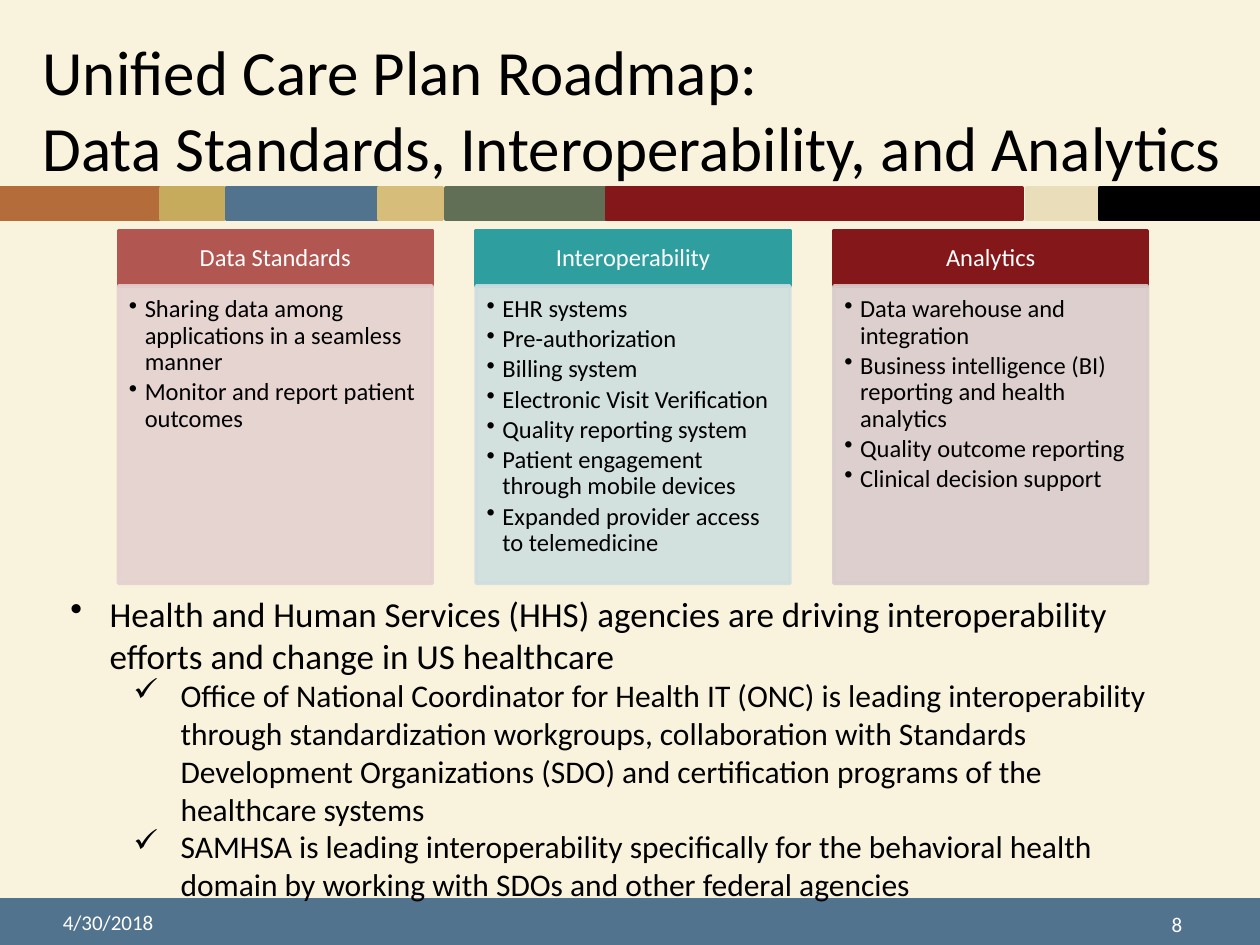
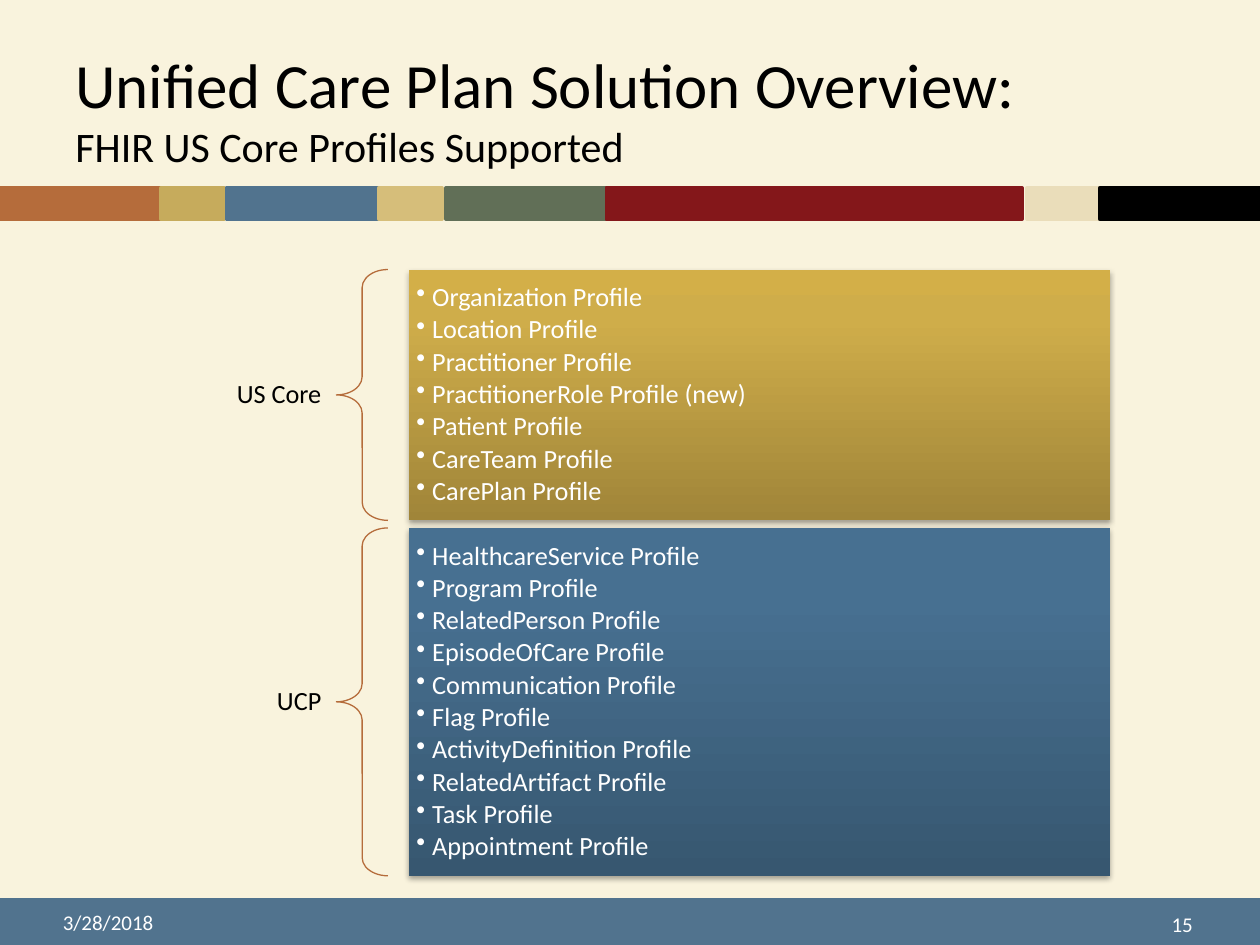
from copy import deepcopy
from dataclasses import dataclass

from lxml.etree import SubElement
from pptx import Presentation
from pptx.dml.color import RGBColor
from pptx.enum.shapes import MSO_SHAPE as Kind
from pptx.enum.text import MSO_ANCHOR as Anchor, PP_ALIGN as Align
from pptx.oxml.ns import qn
from pptx.util import Pt


@dataclass(frozen=True)
class Theme:
    font: str = "Calibri"
    black: str = "000000"
    white: str = "FFFFFF"
    cream: str = "F9F3DD"
    blue: str = "51738E"
    rust: str = "B56C3B"
    red: str = "84171A"
    title: float = 36
    sub: float = 24
    lead: float = 20
    point: float = 18
    group: float = 15
    panel: float = 14
    foot: float = 12


THEME = Theme()


@dataclass(frozen=True)
class Box:
    """A place on the slide, in points."""
    left: float
    top: float
    width: float
    height: float


@dataclass(frozen=True)
class Style:
    """How a paragraph looks; after is a share of the type size."""
    size: float
    color: str = THEME.black
    align: Align = Align.LEFT
    space: float = 1
    after: float = 0
    bullet: str = ""
    margin: float = 0
    hang: float = 0


@dataclass(frozen=True)
class Frame:
    anchor: Anchor = Anchor.TOP
    inset: tuple[float, float, float, float] = (7.2, 3.6, 7.2, 3.6)


@dataclass(frozen=True)
class Band:
    left: float
    width: float
    color: str


@dataclass(frozen=True)
class Panel:
    title: str
    color: str
    tint: str
    items: tuple[str, ...]


@dataclass(frozen=True)
class Group:
    label: str
    stops: tuple[str, str, str]
    items: tuple[str, ...]


MIDDLE = Frame(Anchor.MIDDLE)
TITLE = Style(THEME.title)
FOOT = Style(THEME.foot, THEME.white)
LEAD = Style(THEME.lead, bullet="•", margin=22.5, hang=22.5)
CHECK = Style(THEME.point, bullet="✓", margin=63, hang=27)
HEAD = Style(THEME.panel, THEME.white, Align.CENTER, 0.9, 0.35)
ITEM = Style(THEME.panel, space=0.9, after=0.15, bullet="•", margin=9, hang=9)
LABEL = Style(THEME.group, align=Align.RIGHT, space=0.9, after=0.35)
ENTRY = Style(THEME.group, THEME.white, space=0.9, after=0.15,
              bullet="•", margin=9, hang=9)

BANDS = (
    Band(0, 91.5, THEME.rust),
    Band(92, 36, "C6AB5C"),
    Band(129.5, 86.5, THEME.blue),
    Band(255, 91.5, "616F57"),
    Band(216.5, 36, "D6BE7A"),
    Band(346.5, 237.5, THEME.red),
    Band(587, 57.5, "EADDBA"),
    Band(628.5, 91.5, THEME.black),
)

PANELS = (
    Panel("Data Standards", "B15651", "E4D1D0", (
        "Sharing data among applications in a seamless manner",
        "Monitor and report patient outcomes")),
    Panel("Interoperability", "2F9E9F", "CEDEDF", (
        "EHR systems",
        "Pre-authorization",
        "Billing system",
        "Electronic Visit Verification",
        "Quality reporting system",
        "Patient engagement through mobile devices",
        "Expanded provider access to telemedicine")),
    Panel("Analytics", THEME.red, "D9CCCC", (
        "Data warehouse and integration",
        "Business intelligence (BI) reporting and health analytics",
        "Quality outcome reporting",
        "Clinical decision support")),
)

POINTS = (
    (LEAD, "Health and Human Services (HHS) agencies are driving "
           "interoperability efforts and change in US healthcare"),
    (CHECK, "Office of National Coordinator for Health IT (ONC) is leading "
            "interoperability through standardization workgroups, "
            "collaboration with Standards Development Organizations (SDO) "
            "and certification programs of the healthcare systems"),
    (CHECK, "SAMHSA is leading interoperability specifically for the "
            "behavioral health domain by working with SDOs and other "
            "federal agencies"),
)

GROUPS = (
    Group("US Core", ("A08539", "CFAD4A", "D3AF48"), (
        "Organization", "Location", "Practitioner", "PractitionerRole",
        "Patient", "CareTeam", "CarePlan")),
    Group("UCP", ("375770", "477091", "467193"), (
        "HealthcareService", "Program", "RelatedPerson", "EpisodeOfCare",
        "Communication", "Flag", "ActivityDefinition", "RelatedArtifact",
        "Task", "Appointment")),
)
NEW = {"PractitionerRole"}


def rgb(color: str) -> RGBColor:
    return RGBColor.from_string(color)


def spots(box: Box) -> tuple:
    return Pt(box.left), Pt(box.top), Pt(box.width), Pt(box.height)


def draw(slide, box: Box, fill: str = "", line: str = "",
         weight: float = 2, kind: Kind = Kind.RECTANGLE):
    """Add a flat shape; an empty colour means no fill or no line."""
    shape = slide.shapes.add_shape(kind, *spots(box))
    shape.shadow.inherit = False
    if fill:
        shape.fill.solid()
        shape.fill.fore_color.rgb = rgb(fill)
    else:
        shape.fill.background()
    if line:
        shape.line.color.rgb = rgb(line)
        shape.line.width = Pt(weight)
    else:
        shape.line.fill.background()
    return shape


def write(shape, paras, frame: Frame = Frame()) -> None:
    """Fill a shape with (style, text) pairs."""
    body = shape.text_frame
    body.word_wrap = True
    body.vertical_anchor = frame.anchor
    (body.margin_left, body.margin_top,
     body.margin_right, body.margin_bottom) = map(Pt, frame.inset)
    for i, (style, text) in enumerate(paras):
        para = body.add_paragraph() if i else body.paragraphs[0]
        para.text = text
        para.alignment = style.align
        para.line_spacing = style.space
        para.space_before = Pt(0)
        para.space_after = Pt(style.size * style.after)
        for run in para.runs:
            run.font.name = THEME.font
            run.font.size = Pt(style.size)
            run.font.color.rgb = rgb(style.color)
        if style.bullet:
            props = para._p.get_or_add_pPr()
            props.set("marL", str(Pt(style.margin)))
            props.set("indent", str(-Pt(style.hang)))
            SubElement(props, qn("a:buChar"), char=style.bullet)


def label(slide, box: Box, paras, frame: Frame = MIDDLE):
    shape = slide.shapes.add_textbox(*spots(box))
    write(shape, paras, frame)
    return shape


def fade(shape, percent: int) -> None:
    """Set the opacity of the fill and the line."""
    for color in shape._element.spPr.iter(qn("a:srgbClr")):
        SubElement(color, qn("a:alpha"), val=str(percent * 1000))


def shade(shape, colors: tuple[str, str, str]) -> None:
    """Fill with a gradient that rises from the bottom edge."""
    shape.fill.gradient()
    shape.fill.gradient_angle = 90
    stops = shape._element.spPr.find(".//" + qn("a:gsLst"))
    stops.append(deepcopy(stops[-1]))
    for stop, color, place in zip(shape.fill.gradient_stops, colors,
                                  (0, 0.8, 1)):
        stop.color.rgb = rgb(color)
        stop.position = place


def cast(shape) -> None:
    """Add a soft shadow below the shape."""
    effects = shape._element.spPr.find(qn("a:effectLst"))
    shadow = SubElement(effects, qn("a:outerShdw"), blurRad=str(Pt(3.1)),
                        dist=str(Pt(1.8)), dir="5400000", rotWithShape="0")
    color = SubElement(shadow, qn("a:srgbClr"), val=THEME.black)
    SubElement(color, qn("a:alpha"), val="35000")


def start(deck, title: str, box: Box, date: str, page: str):
    """Add a slide with its backdrop, bands, title and footer."""
    slide = deck.slides.add_slide(deck.slide_layouts[6])
    draw(slide, Box(0, 511.2, 720, 28.8), THEME.blue)
    draw(slide, Box(0, 0, 720, 512), THEME.cream, THEME.cream)
    for band in BANDS:
        draw(slide, Box(band.left, 107.3, band.width, 18),
             band.color, band.color)
    head = label(slide, box, [(TITLE, title)])
    label(slide, Box(28.8, 512.6, 77, 28.8), [(FOOT, date)])
    label(slide, Box(662.4, 513.4, 57.6, 28.8), [(FOOT, page)])
    return slide, head


def add_roadmap(deck) -> None:
    slide, _ = start(
        deck, "Unified Care Plan Roadmap:\n"
        "Data Standards, Interoperability, and Analytics",
        Box(17.3, 21.6, 691.2, 80.6), "4/30/2018", "8")
    label(slide, Box(33.1, 334.8, 645.8, 186.5), POINTS, Frame())
    width, step, top, tall = 179.3, 204.4, 131.7, 31.7
    for i, panel in enumerate(PANELS):
        left = 67.7 + i * step
        head = draw(slide, Box(left, top, width, tall),
                    panel.color, panel.color)
        write(head, [(HEAD, panel.title)],
              Frame(Anchor.MIDDLE, (8, 4.5, 8, 4.5)))
        body = draw(slide, Box(left, top + tall, width, 170),
                    panel.tint, panel.tint)
        fade(body, 90)
        write(body, [(ITEM, text) for text in panel.items],
              Frame(inset=(6, 6, 8, 9)))


def add_profiles(deck) -> None:
    slide, head = start(
        deck, "Unified Care Plan Solution Overview:\n"
        "FHIR US Core Profiles Supported",
        Box(36, 21.6, 648, 80.6), "3/28/2018", "15")
    head.text_frame.paragraphs[0].runs[-1].font.size = Pt(THEME.sub)
    top, row, pad, gap, tag = 154, 18.48, 14, 4.3, 23
    for group in GROUPS:
        height = pad + row * len(group.items)
        label(slide, Box(44.6, top + (height - tag) / 2, 147.6, tag),
              [(LABEL, group.label)],
              Frame(Anchor.MIDDLE, (8.6, 3, 8.6, 3)))
        brace = draw(slide, Box(192.2, top, 29.5, height), line=THEME.rust,
                     weight=0.75, kind=Kind.LEFT_BRACE)
        brace.adjustments[0] = 0.35
        block = draw(slide, Box(233.5, top, 401, height))
        shade(block, group.stops)
        cast(block)
        write(block, [(ENTRY, f"{name} Profile" + " (new)" * (name in NEW))
                      for name in group.items],
              Frame(Anchor.MIDDLE, (4.5, 4.5, 4.5, 4.5)))
        top += height + gap


def main() -> None:
    deck = Presentation()
    deck.slide_width, deck.slide_height = Pt(720), Pt(540)
    add_roadmap(deck)
    add_profiles(deck)
    deck.save("out.pptx")


if __name__ == "__main__":
    main()
